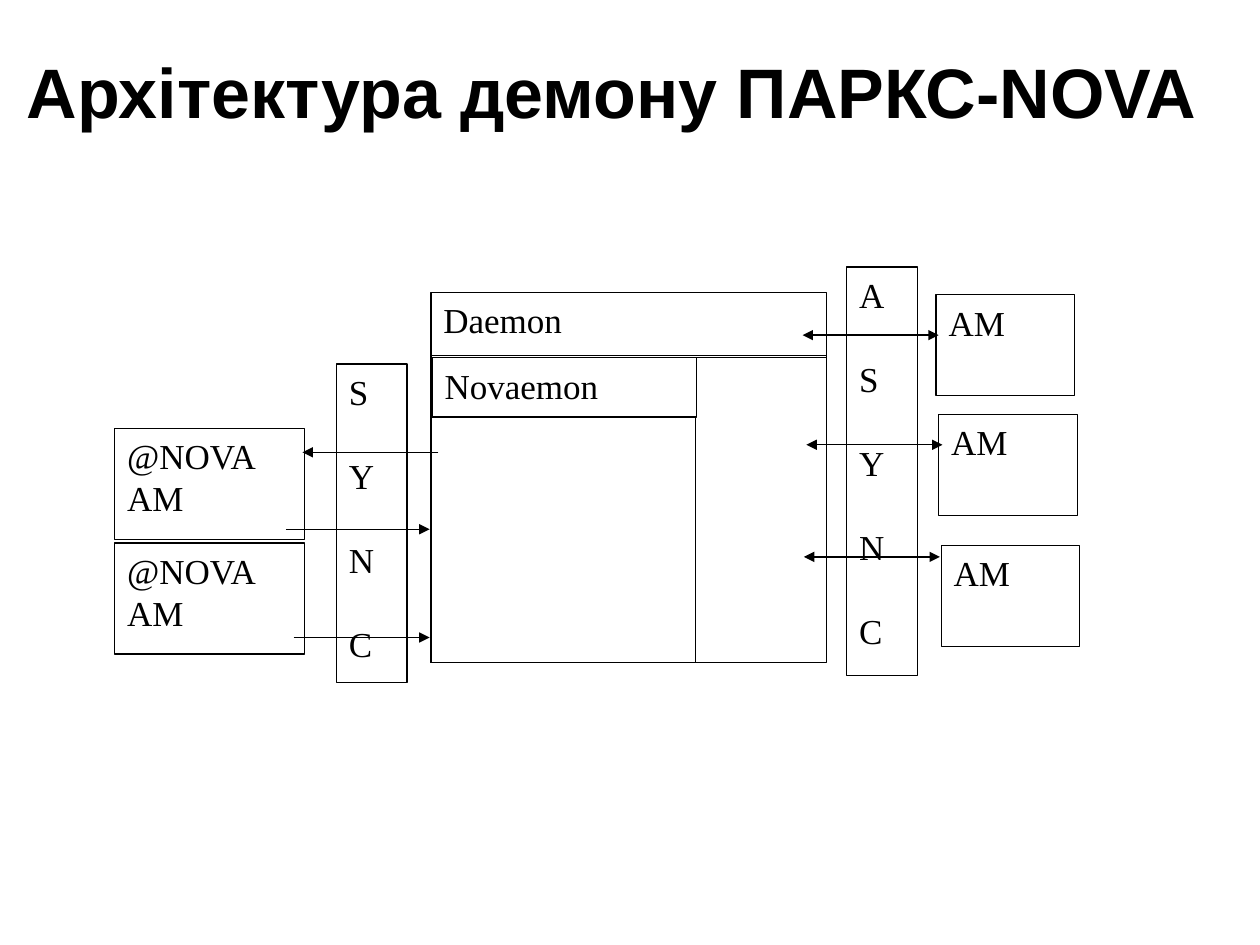
from dataclasses import dataclass

from lxml import etree
from pptx import Presentation
from pptx import util as u
from pptx.dml import color
from pptx.enum import shapes, text
from pptx.oxml import ns


@dataclass(frozen=True)
class Theme:
    ink: color.RGBColor = color.RGBColor(0, 0, 0)
    paper: color.RGBColor = color.RGBColor(255, 255, 255)
    title_font: str = "Arial"
    label_font: str = "Times New Roman"
    title_size: int = 40
    label_size: int = 20
    leading: int = 24
    line_width: float = 0.75


THEME = Theme()


@dataclass(frozen=True)
class Box:
    left: float
    top: float
    width: float
    height: float
    lines: tuple[str, ...] = ()
    filled: bool = True
    line_width: float = THEME.line_width
    gap: int = 0  # points after each line


@dataclass(frozen=True)
class Arrow:
    start: float
    end: float
    y: float
    double: bool = False


def apply_format(target, values: dict) -> None:
    for name, value in values.items():
        setattr(target, name, value)


def write_lines(frame, lines: tuple[str, ...], font: dict, layout: dict) -> None:
    for index, line in enumerate(lines):
        paragraph = frame.paragraphs[0] if index == 0 else frame.add_paragraph()
        apply_format(paragraph, layout)
        run = paragraph.add_run()
        run.text = line
        apply_format(run.font, font)
        run.font.color.rgb = THEME.ink


def draw_title(slide, title: str) -> None:
    heading = slide.shapes.add_textbox(
        u.Inches(0), u.Inches(0.29), u.Inches(9.71), u.Inches(0.85)
    )
    frame = heading.text_frame
    apply_format(frame, {"word_wrap": True, "vertical_anchor": text.MSO_ANCHOR.MIDDLE})
    write_lines(
        frame,
        (title,),
        {"name": THEME.title_font, "size": u.Pt(THEME.title_size), "bold": True},
        {"alignment": text.PP_ALIGN.CENTER},
    )


def draw_box(slide, box: Box) -> None:
    block = slide.shapes.add_shape(
        shapes.MSO_SHAPE.RECTANGLE,
        u.Inches(box.left), u.Inches(box.top), u.Inches(box.width), u.Inches(box.height),
    )
    block.shadow.inherit = False
    if box.filled:
        block.fill.solid()
        block.fill.fore_color.rgb = THEME.paper
    else:
        block.fill.background()
    block.line.color.rgb = THEME.ink
    block.line.width = u.Pt(box.line_width)
    frame = block.text_frame
    apply_format(frame, {"word_wrap": True, "vertical_anchor": text.MSO_ANCHOR.TOP})
    write_lines(
        frame,
        box.lines,
        {"name": THEME.label_font, "size": u.Pt(THEME.label_size)},
        {
            "alignment": text.PP_ALIGN.LEFT,
            "line_spacing": u.Pt(THEME.leading),
            "space_after": u.Pt(box.gap),
        },
    )


def draw_arrow(slide, arrow: Arrow) -> None:
    link = slide.shapes.add_connector(
        shapes.MSO_CONNECTOR.STRAIGHT,
        u.Inches(arrow.start), u.Inches(arrow.y), u.Inches(arrow.end), u.Inches(arrow.y),
    )
    link.line.color.rgb = THEME.ink
    link.line.width = u.Pt(THEME.line_width)
    outline = link.line._get_or_add_ln()
    for tag in ("a:headEnd", "a:tailEnd") if arrow.double else ("a:tailEnd",):
        etree.SubElement(outline, ns.qn(tag), type="triangle")
    etree.SubElement(link._element.spPr, ns.qn("a:effectLst"))


def letter_column(left: float, top: float, height: float, word: str) -> Box:
    return Box(left, top, 0.56, height, tuple(word), False, 0, THEME.leading)


def module(left: float, top: float) -> Box:
    return Box(left, top, 1.1, 0.8, ("AM",))


def nova_module(top: float) -> Box:
    return Box(0.91, top, 1.51, 0.88, ("@NOVA", "AM"))


# Asynchronous side and the daemon
DAEMON_PARTS = (
    letter_column(6.72, 2.12, 3.24, "ASYNC"),
    Box(3.42, 2.32, 3.14, 0.52, ("Daemon",)),
    Box(3.42, 2.82, 3.14, 2.44, filled=False),
    Box(3.43, 2.84, 2.1, 0.47, ("Novaemon",)),
    Box(3.42, 3.31, 2.1, 1.95, filled=False),
    module(7.43, 2.34),
    module(7.45, 3.29),
    module(7.47, 4.33),
)
ASYNC_LINKS = tuple(
    Arrow(start, start + 1.08, y, double=True)
    for start, y in ((6.37, 2.66), (6.38, 4.42), (6.4, 3.53))
)

# Synchronous side
SYNC_PARTS = (
    letter_column(2.67, 2.89, 2.53, "SYNC"),
    nova_module(3.4),
    nova_module(4.31),
)
SYNC_LINKS = (
    Arrow(3.48, 2.4, 3.59),
    Arrow(2.27, 3.41, 4.2),
    Arrow(2.33, 3.41, 5.06),
)


def main() -> None:
    deck = Presentation()
    apply_format(deck, {"slide_width": u.Inches(10), "slide_height": u.Inches(7.5)})
    slide = deck.slides.add_slide(deck.slide_layouts[6])

    draw_title(slide, "Архітектура демону ПАРКС-NOVA")
    for parts, links in ((DAEMON_PARTS, ASYNC_LINKS), (SYNC_PARTS, SYNC_LINKS)):
        for box in parts:
            draw_box(slide, box)
        for arrow in links:
            draw_arrow(slide, arrow)

    deck.save("out.pptx")


if __name__ == "__main__":
    main()
